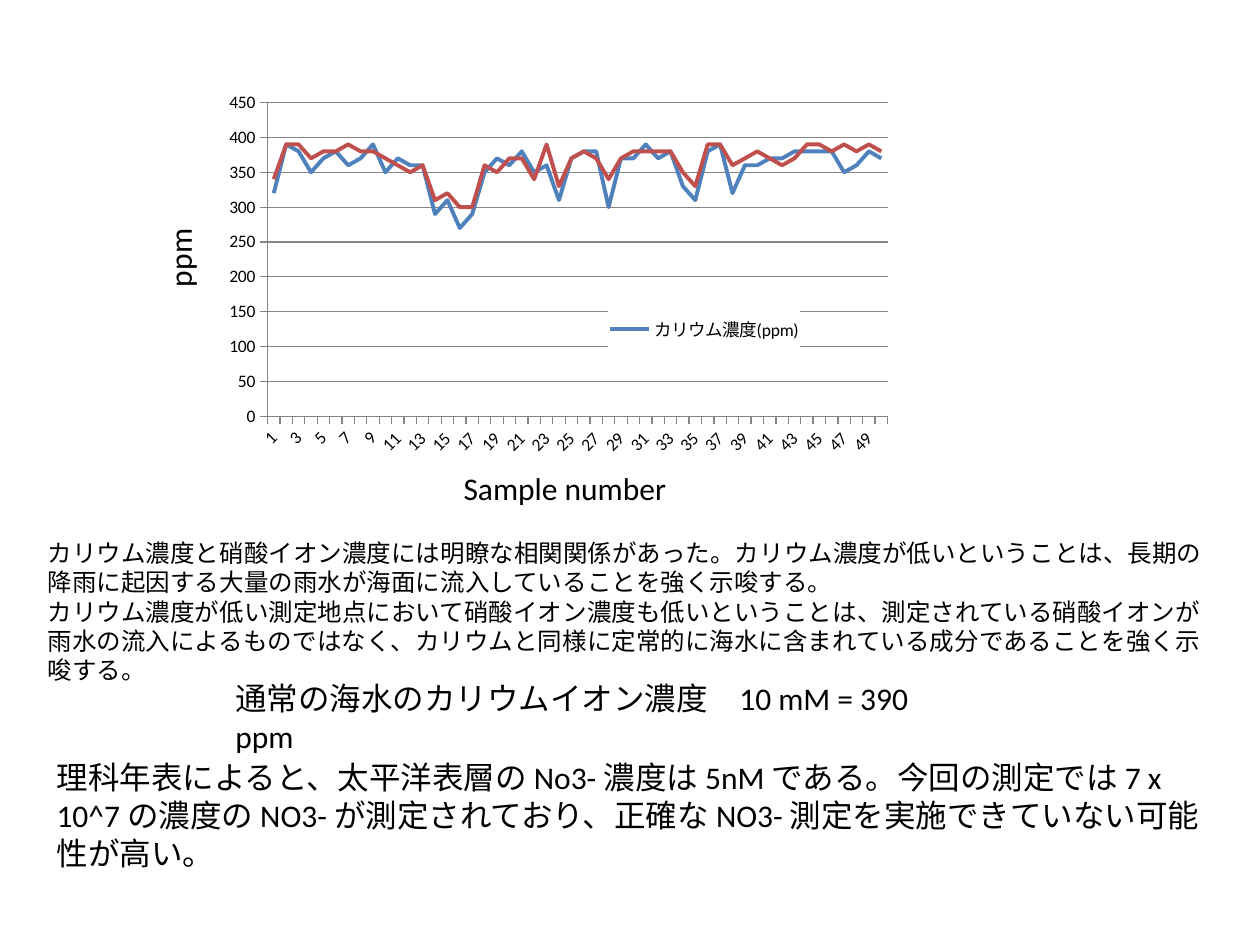
from pptx import Presentation
from pptx.chart.data import CategoryChartData
from pptx.dml.color import RGBColor
from pptx.enum.chart import XL_CHART_TYPE, XL_LEGEND_POSITION, XL_TICK_MARK
from pptx.enum.text import MSO_AUTO_SIZE
from pptx.oxml import parse_xml
from pptx.oxml.ns import nsdecls, qn
from pptx.util import Pt

COLORS = {"text": "000000", "grid": "868686", "potassium": "4F81BD", "nitrate": "C0504D"}
FONT = "Calibri"


def style_font(font, size):
    font.name = FONT
    font.size = Pt(size)
    font.color.rgb = RGBColor.from_string(COLORS["text"])


def make_layout(left, top, width, height, inner=False):
    target = '<c:layoutTarget val="inner"/>' if inner else ""
    return parse_xml(
        f'<c:layout {nsdecls("c")}><c:manualLayout>{target}'
        '<c:xMode val="edge"/><c:yMode val="edge"/>'
        f'<c:x val="{left}"/><c:y val="{top}"/><c:w val="{width}"/><c:h val="{height}"/>'
        "</c:manualLayout></c:layout>")


presentation = Presentation()
presentation.slide_width, presentation.slide_height = Pt(720), Pt(540)
slide = presentation.slides.add_slide(presentation.slide_layouts[6])

# Chart data, one value per sample
potassium = [
    320, 390, 380, 350, 370, 380, 360, 370, 390, 350,
    370, 360, 360, 290, 310, 270, 290, 350, 370, 360,
    380, 350, 360, 310, 370, 380, 380, 300, 370, 370,
    390, 370, 380, 330, 310, 380, 390, 320, 360, 360,
    370, 370, 380, 380, 380, 380, 350, 360, 380, 370]
nitrate = [
    340, 390, 390, 370, 380, 380, 390, 380, 380, 370,
    360, 350, 360, 310, 320, 300, 300, 360, 350, 370,
    370, 340, 390, 330, 370, 380, 370, 340, 370, 380,
    380, 380, 380, 350, 330, 390, 390, 360, 370, 380,
    370, 360, 370, 390, 390, 380, 390, 380, 390, 380]
chart_data = CategoryChartData()
chart_data.categories = [str(sample) for sample in range(1, len(potassium) + 1)]
chart_data.add_series("カリウム濃度(ppm)", potassium)
chart_data.add_series("", nitrate)

# Line chart
chart = slide.shapes.add_chart(
    XL_CHART_TYPE.LINE, Pt(123), Pt(50), Pt(499), Pt(216), chart_data).chart
chart.has_title = False
style_font(chart.font, 10)
plot = chart.plots[0]
plot.vary_by_categories = False
for series, color in zip(plot.series, ("potassium", "nitrate")):
    series.smooth = False
    series.format.line.width = Pt(2.25)
    series.format.line.color.rgb = RGBColor.from_string(COLORS[color])

# Axes
value_axis, category_axis = chart.value_axis, chart.category_axis
value_axis.minimum_scale, value_axis.maximum_scale, value_axis.major_unit = 0, 450, 50
value_axis.has_major_gridlines = True
grid_line = value_axis.major_gridlines.format.line
for line in (grid_line, value_axis.format.line, category_axis.format.line):
    line.width = Pt(0.75)
    line.color.rgb = RGBColor.from_string(COLORS["grid"])
for axis in (value_axis, category_axis):
    axis.major_tick_mark = XL_TICK_MARK.OUTSIDE
    style_font(axis.tick_labels.font, 10)
category_element = category_axis._element
category_element.find(qn("c:txPr")).find(qn("a:bodyPr")).set("rot", "-2700000")
category_element.find(qn("c:noMultiLvlLbl")).addprevious(
    parse_xml(f'<c:tickLblSkip {nsdecls("c")} val="2"/>'))

# Legend for the potassium series, on white inside the plot
chart.has_legend = True
legend = chart.legend
legend.position = XL_LEGEND_POSITION.RIGHT
legend.include_in_layout = False
style_font(legend.font, 10)
legend_element = legend._element
plot_area = plot._element.getparent()
for element in (legend_element, plot_area):
    for layout in element.findall(qn("c:layout")):
        element.remove(layout)
plot_area.insert(0, make_layout(0.06, 0.04, 0.71, 0.83, inner=True))
legend_position = legend_element.find(qn("c:legendPos"))
legend_position.addnext(make_layout(0.45, 0.56, 0.22, 0.16))
legend_position.addnext(parse_xml(
    f'<c:legendEntry {nsdecls("c")}><c:idx val="1"/><c:delete val="1"/></c:legendEntry>'))
legend_element.find(qn("c:txPr")).addprevious(parse_xml(
    f'<c:spPr {nsdecls("c", "a")}><a:solidFill><a:srgbClr val="FFFFFF"/></a:solidFill></c:spPr>'))

# Axis titles and commentary: left, top, width, height, size, rotation, wrap, paragraphs
text_boxes = [
    (257.8, 264.2, 131.8, 29, 18, 0, False, ["Sample number"]),
    (78.5, 132.5, 48.2, 29, 18, 270, False, ["ppm"]),
    (20.2, 303.8, 680.4, 75, 14, 0, True, [
        "カリウム濃度と硝酸イオン濃度には明瞭な相関関係があった。カリウム濃度が低いということは、"
        "長期の降雨に起因する大量の雨水が海面に流入していることを強く示唆する。",
        "カリウム濃度が低い測定地点において硝酸イオン濃度も低いということは、"
        "測定されている硝酸イオンが雨水の流入によるものではなく、"
        "カリウムと同様に定常的に海水に含まれている成分であることを強く示唆する。"]),
    (127.4, 384.5, 419, 29, 18, 0, True, ["通常の海水のカリウムイオン濃度　10 mM = 390 ppm"]),
    (25.2, 429.8, 680.4, 51, 18, 0, True, [
        "理科年表によると、太平洋表層の No3- 濃度は 5nM である。"
        "今回の測定では 7 x 10^7 の濃度の NO3- が測定されており、"
        "正確な NO3- 測定を実施できていない可能性が高い。"]),
]
for left, top, width, height, size, rotation, wrap, paragraphs in text_boxes:
    shape = slide.shapes.add_textbox(Pt(left), Pt(top), Pt(width), Pt(height))
    shape.rotation = rotation
    text_frame = shape.text_frame
    text_frame.word_wrap = wrap
    text_frame.auto_size = MSO_AUTO_SIZE.SHAPE_TO_FIT_TEXT
    for index, text in enumerate(paragraphs):
        paragraph = text_frame.add_paragraph() if index else text_frame.paragraphs[0]
        run = paragraph.add_run()
        run.text = text
        style_font(run.font, size)

presentation.save("out.pptx")
